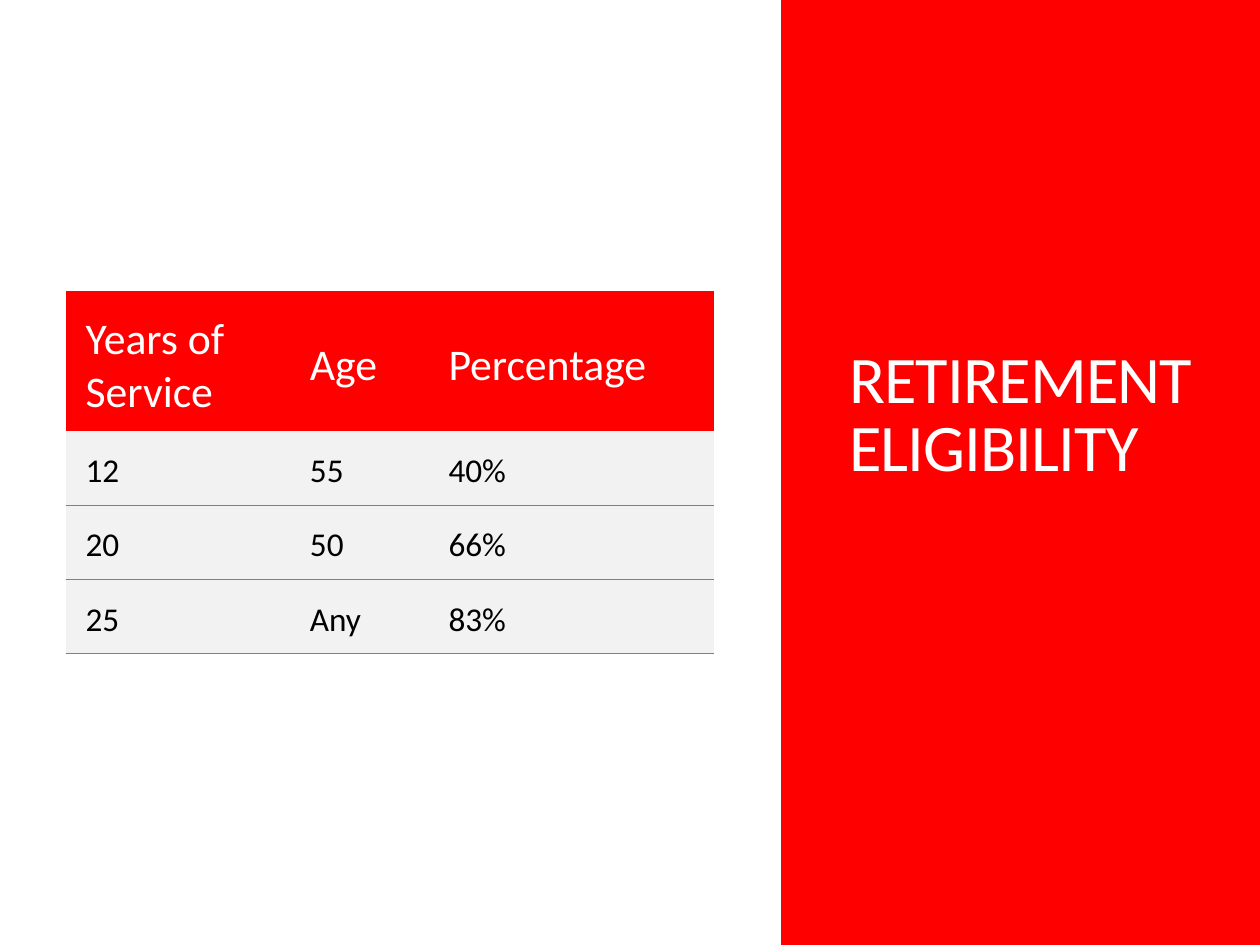
from lxml import etree
from pptx import Presentation
from pptx import util as u
from pptx.dml.color import RGBColor
from pptx.enum import shapes, text
from pptx.oxml.ns import qn

COLORS = {"red": "FF0000", "white": "FFFFFF", "row": "F2F2F2",
          "rule": "808080", "ink": "000000"}
HEADER = {"size": u.Pt(25), "color": "white"}
BODY = {"size": u.Pt(19), "color": "ink"}
TITLE = {"size": u.Pt(38), "color": "white"}
ROWS = [("Years of Service", "Age", "Percentage"),
        ("12", "55", "40%"),
        ("20", "50", "66%"),
        ("25", "Any", "83%")]


def rgb(name):
    return RGBColor.from_string(COLORS[name])


class SlideBuilder:
    font_name = "Calibri"
    cell_margins = {"margin_left": 0.16, "margin_right": 0.16,
                    "margin_top": 0.16, "margin_bottom": 0.08}

    def __init__(self, page):
        self.page = page

    def add_words(self, para, words, style):
        span = para.add_run()
        span.text = words
        values = {"name": self.font_name, "size": style["size"], "bold": False}
        for key, value in values.items():
            setattr(span.font, key, value)
        span.font.color.rgb = rgb(style["color"])
        return span

    def panel(self, left, width, color):
        box = self.page.shapes.add_shape(
            shapes.MSO_SHAPE.RECTANGLE, u.Inches(left), 0,
            u.Inches(width), u.Inches(7.5))
        box.shadow.inherit = False
        box.fill.solid()
        box.fill.fore_color.rgb = rgb(color)
        box.line.fill.background()

    def title(self, words, left, top, width, height):
        box = self.page.shapes.add_textbox(*map(u.Inches, (left, top, width, height)))
        frame = box.text_frame
        frame.word_wrap = True
        frame.vertical_anchor = text.MSO_ANCHOR.BOTTOM
        para = frame.paragraphs[0]
        para.line_spacing = 0.85
        span = self.add_words(para, words, TITLE)
        span.font._element.set("spc", "-50")

    def borders(self, cell, ruled):
        properties = cell._tc.get_or_add_tcPr()
        for side in ("lnL", "lnR", "lnT", "lnB"):
            line = etree.SubElement(properties, qn("a:" + side), w=str(u.Pt(0.75)))
            if side in ruled:
                fill = etree.SubElement(line, qn("a:solidFill"))
                etree.SubElement(fill, qn("a:srgbClr"), val=COLORS["rule"])
            else:
                etree.SubElement(line, qn("a:noFill"))

    def cell(self, cell, words, is_header, ruled):
        self.borders(cell, ruled)
        cell.fill.solid()
        cell.fill.fore_color.rgb = rgb("red" if is_header else "row")
        for key, value in self.cell_margins.items():
            setattr(cell, key, u.Inches(value))
        anchors = text.MSO_ANCHOR
        cell.vertical_anchor = anchors.MIDDLE if is_header else anchors.TOP
        self.add_words(cell.text_frame.paragraphs[0], words,
                       HEADER if is_header else BODY)

    def table(self, rows, left, top, widths, heights):
        frame = self.page.shapes.add_table(
            len(rows), len(widths), u.Inches(left), u.Inches(top),
            u.Inches(sum(widths)), u.Inches(sum(heights)))
        table = frame.table
        table.first_row = table.horz_banding = False
        for column, width in zip(table.columns, widths):
            column.width = u.Inches(width)
        for index, (row, height) in enumerate(zip(table.rows, heights)):
            row.height = u.Inches(height)
            # Rules run below every body row, none around the header
            ruled = [("lnB", index > 0), ("lnT", index > 1)]
            sides = [side for side, shown in ruled if shown]
            for cell, words in zip(row.cells, rows[index]):
                self.cell(cell, words, index == 0, sides)


def main():
    deck = Presentation()
    deck.slide_width, deck.slide_height = u.Inches(10), u.Inches(7.5)
    builder = SlideBuilder(deck.slides.add_slide(deck.slide_layouts[6]))

    # White backdrop and red side panel with its edge strip
    builder.panel(0, 10, "white")
    builder.panel(6.24, 3.76, "red")
    builder.title("RETIREMENT ELIGIBILITY", 6.64, 0.7, 3, 3.2)
    builder.panel(6.2, 0.05, "red")

    # Eligibility table
    builder.table(ROWS, 0.52, 2.31, [1.78, 1.1, 2.27], [1.11] + [0.59] * 3)
    deck.save("out.pptx")


if __name__ == "__main__":
    main()
